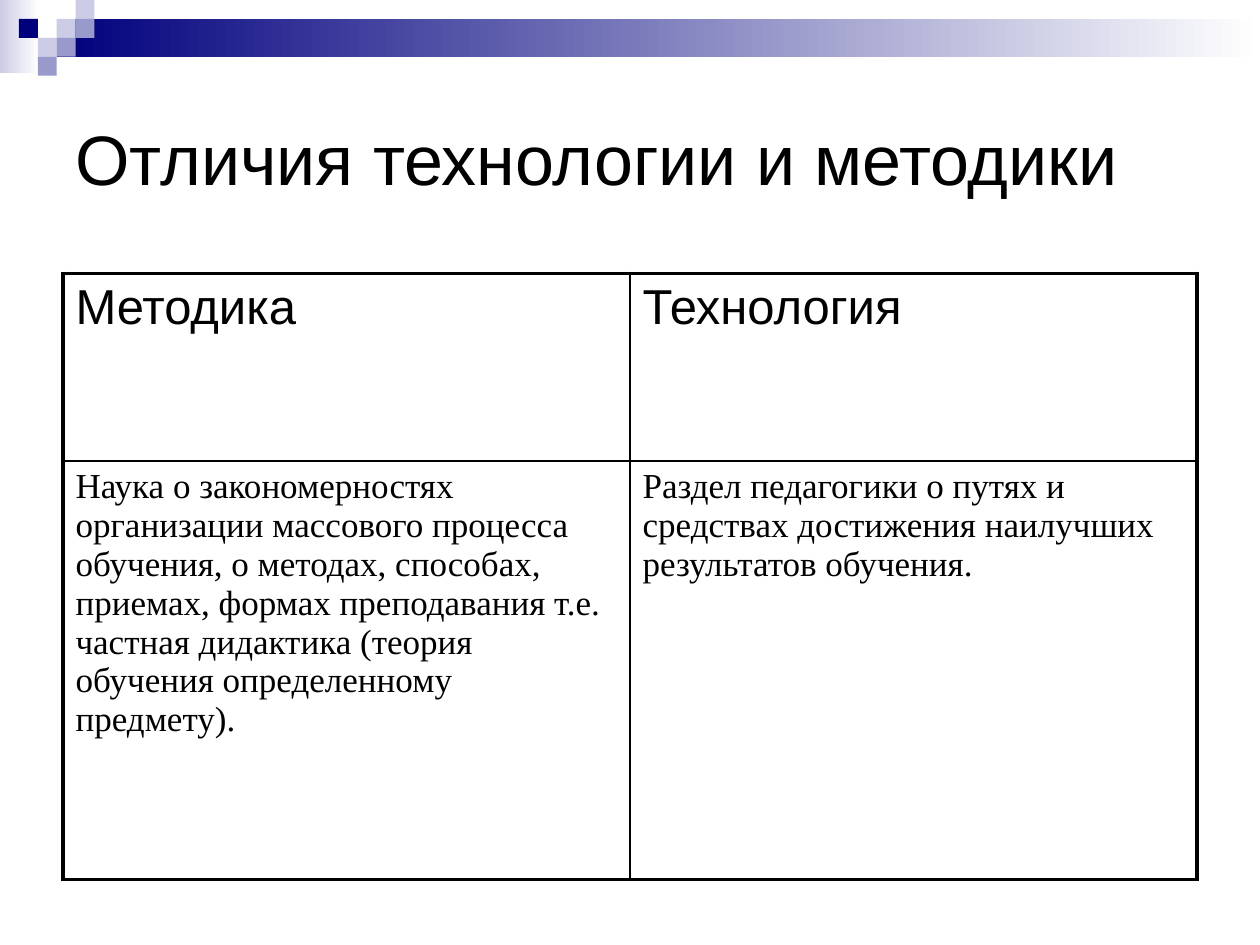
from lxml import etree
from pptx import Presentation
from pptx.dml.color import RGBColor
from pptx.enum.shapes import MSO_SHAPE
from pptx.enum.text import MSO_ANCHOR, PP_ALIGN
from pptx.oxml.ns import qn
from pptx.util import Inches, Pt

RECT = MSO_SHAPE.RECTANGLE
MIDDLE = MSO_ANCHOR.MIDDLE
LEFT = PP_ALIGN.LEFT

# Content
TITLE = "Отличия технологии и методики"
ROWS = [
    ("Методика", "Технология"),
    ("Наука о закономерностях организации массового процесса обучения, "
     "о методах, способах, приемах, формах преподавания т.е. частная "
     "дидактика (теория обучения определенному предмету).",
     "Раздел педагогики о путях и средствах достижения наилучших "
     "результатов обучения."),
]

THEME = {
    "navy": "00007D", "violet": "9999CC", "pale": "CCCCE6",
    "white": "FFFFFF", "ink": "000000",
    "title": {"name": "Arial", "size": Pt(40), "bold": False},
    "head": {"name": "Arial", "size": Pt(28), "bold": False},
    "body": {"name": "Times New Roman", "size": Pt(20), "bold": False},
    "outer": 2.25, "inner": 1,
}

# Geometry in inches
BARS = [((0, 0, 0.31, 0.58), "pale"), ((0.45, 0.15, 9.55, 0.3), "navy")]
UNIT = 0.15
SQUARES = [  # column and row on the square grid
    (3, 1, "pale"), (4, 0, "pale"), (4, 1, "violet"), (2, 2, "pale"),
    (1, 1, "navy"), (3, 2, "violet"), (2, 3, "violet"),
]
TITLE_BOX = (0.5, 0.5, 9, 1.5)
TABLE_BOX = (0.5, 2.17, 9, 4.81)
ROW_HEIGHTS = (1.49, 3.32)


def color(key):
    return RGBColor.from_string(THEME[key])


def inches(box):
    return [Inches(v) for v in box]


def write(tf, text, style):
    p = tf.paragraphs[0]
    p.alignment = LEFT
    r = p.add_run()
    r.text = text
    for name, value in THEME[style].items():
        setattr(r.font, name, value)
    r.font.color.rgb = color("ink")


def add_rect(s, box, key, fade=False):
    sp = s.shapes.add_shape(RECT, *inches(box))
    sp.shadow.inherit = False
    sp.line.fill.background()
    if fade:
        sp.fill.gradient()
        sp.fill.gradient_angle = 0
        for stop, stop_key in zip(sp.fill.gradient_stops, (key, "white")):
            stop.color.rgb = color(stop_key)
    else:
        sp.fill.solid()
        sp.fill.fore_color.rgb = color(key)


def set_borders(cell, widths):
    tc_pr = cell._tc.get_or_add_tcPr()
    for side, width in widths.items():
        ln = etree.SubElement(tc_pr, qn(f"a:ln{side}"), w=str(Pt(width)))
        fill = etree.SubElement(ln, qn("a:solidFill"))
        etree.SubElement(fill, qn("a:srgbClr"), val=THEME["ink"])


def add_table(s):
    n_rows, n_cols = len(ROWS), len(ROWS[0])
    table = s.shapes.add_table(n_rows, n_cols, *inches(TABLE_BOX)).table
    table.first_row = table.horz_banding = False
    for row, height in zip(table.rows, ROW_HEIGHTS):
        row.height = Inches(height)

    def weight(on_edge):
        return THEME["outer" if on_edge else "inner"]

    for i, texts in enumerate(ROWS):
        for j, text in enumerate(texts):
            cell = table.cell(i, j)
            write(cell.text_frame, text, "body" if i else "head")
            set_borders(cell, {
                "L": weight(j == 0), "R": weight(j == n_cols - 1),
                "T": weight(i == 0), "B": weight(i == n_rows - 1),
            })
            cell.fill.background()


def main():
    prs = Presentation()
    prs.slide_width, prs.slide_height = Inches(10), Inches(7.5)
    s = prs.slides.add_slide(prs.slide_layouts[5])

    # Decorative header
    for box, key in BARS:
        add_rect(s, box, key, fade=True)
    for col, row, key in SQUARES:
        add_rect(s, (col * UNIT, row * UNIT, UNIT, UNIT), key)

    # Title
    title = s.shapes.title
    title.left, title.top, title.width, title.height = inches(TITLE_BOX)
    title.text_frame.vertical_anchor = MIDDLE
    write(title.text_frame, TITLE, "title")

    # Comparison table
    add_table(s)
    prs.save("out.pptx")


if __name__ == "__main__":
    main()
